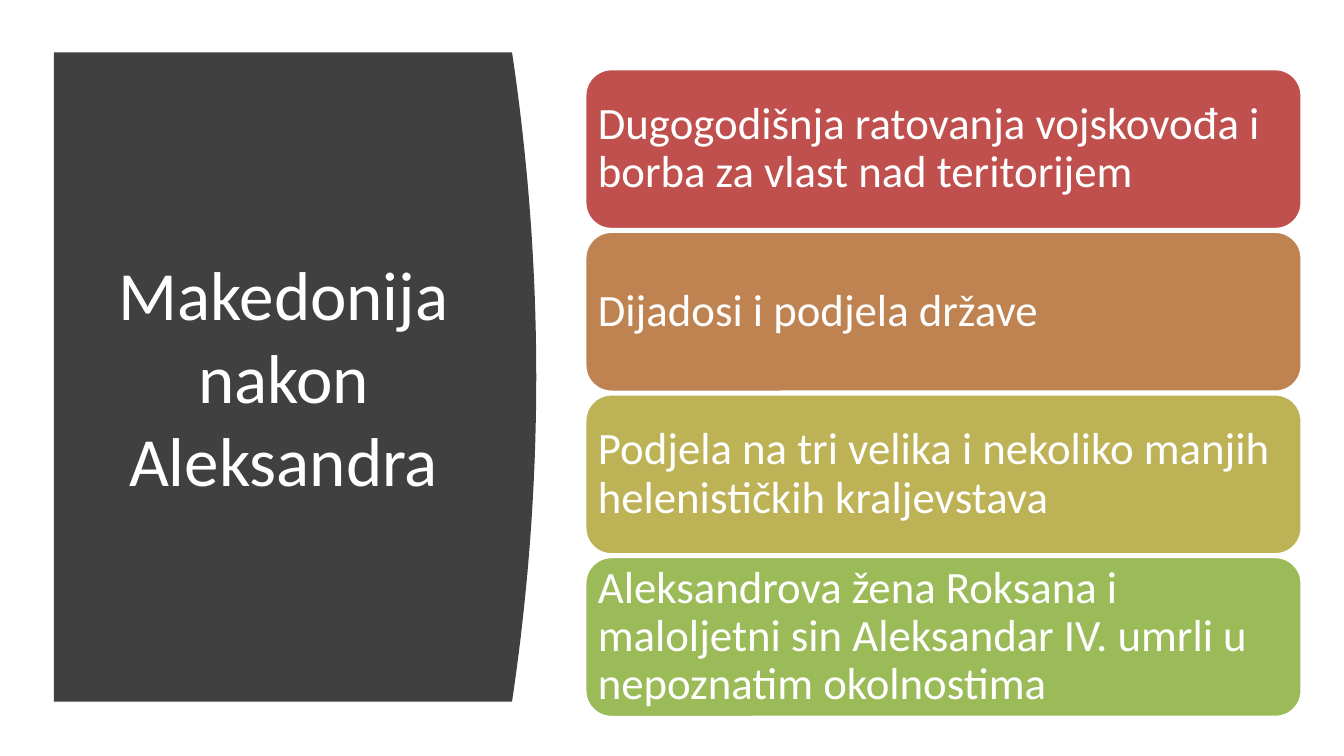
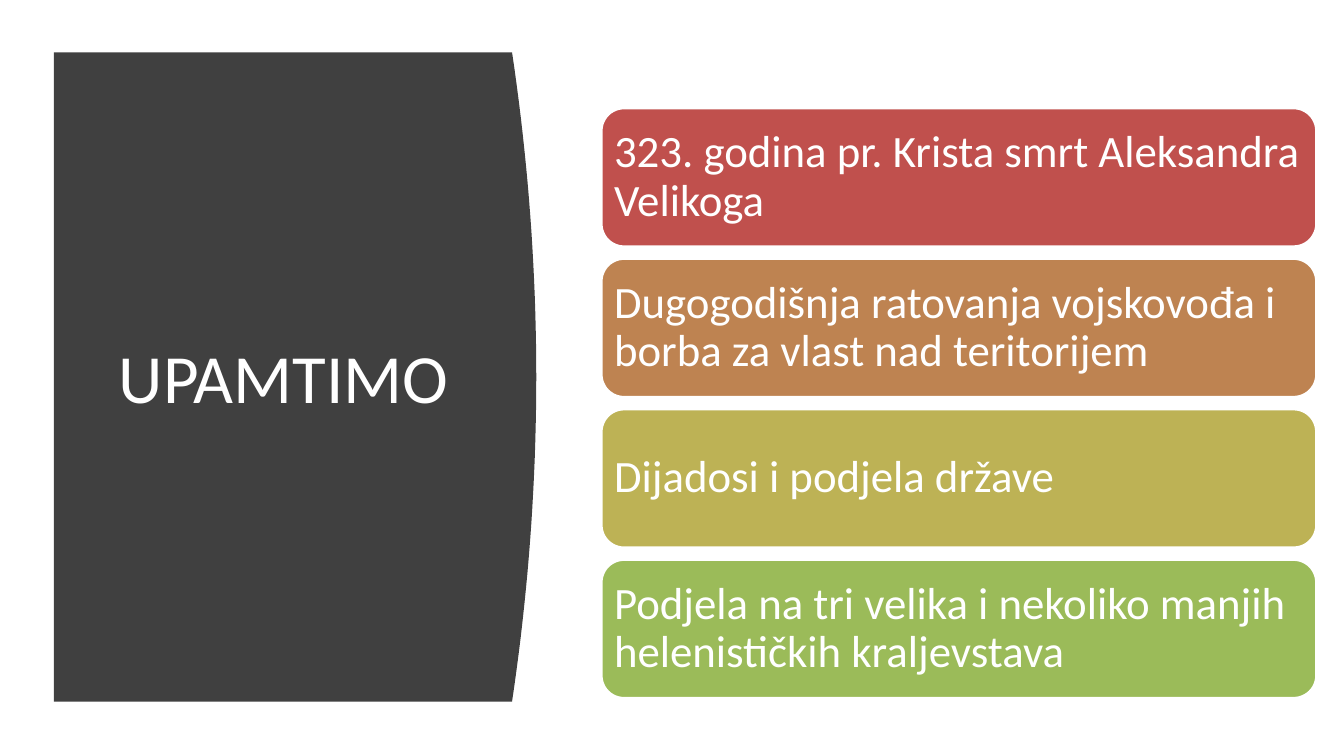
import dataclasses

import pptx
import pptx.dml.color
import pptx.enum.shapes
import pptx.enum.text
import pptx.presentation
import pptx.slide
import pptx.text.text
import pptx.util
from pptx.util import Inches

WHITE = pptx.dml.color.RGBColor(0xFF, 0xFF, 0xFF)
CHARCOAL = pptx.dml.color.RGBColor(0x40, 0x40, 0x40)
RED = pptx.dml.color.RGBColor(0xC0, 0x50, 0x4D)
COPPER = pptx.dml.color.RGBColor(0xBE, 0x83, 0x51)
OLIVE = pptx.dml.color.RGBColor(0xBD, 0xB2, 0x55)
GREEN = pptx.dml.color.RGBColor(0x9B, 0xBB, 0x59)
CARD_COLORS = (RED, COPPER, OLIVE, GREEN)

SLIDE_WIDTH = Inches(10)
SLIDE_HEIGHT = Inches(10 * 9 / 16)

FONT = "Calibri"
TITLE_SIZE = pptx.util.Pt(37)
CARD_SIZE = pptx.util.Pt(24)
TITLE_ONLY = 5

PANEL_LEFT, PANEL_TOP = 0.4, 0.39
PANEL_EDGE, PANEL_BOTTOM = 3.81, 5.22
PANEL_BULGE = 0.18
CURVE_STEPS = 40

CARD_INSET = 0.1
CORNER_RATIO = 0.17
CORNER_TEXT_RATIO = 0.29

WARS = "Dugogodišnja ratovanja vojskovođa i borba za vlast nad teritorijem"
DIADOCHI = "Dijadosi i podjela države"
KINGDOMS = "Podjela na tri velika i nekoliko manjih helenističkih kraljevstava"


@dataclasses.dataclass(frozen=True)
class CardStack:
    left: float
    top: float
    width: float
    height: float
    pitch: float


@dataclasses.dataclass(frozen=True)
class Topic:
    title: str
    stack: CardStack
    points: tuple[str, ...]


TOPICS = (
    Topic(
        "Makedonija nakon Aleksandra",
        CardStack(left=4.35, top=0.51, width=5.34, height=1.2, pitch=1.21),
        (
            WARS,
            DIADOCHI,
            KINGDOMS,
            "Aleksandrova žena Roksana i maloljetni sin Aleksandar IV. "
            "umrli u nepoznatim okolnostima",
        ),
    ),
    Topic(
        "UPAMTIMO",
        CardStack(left=4.47, top=0.8, width=5.33, height=1.04, pitch=1.12),
        ("323. godina pr. Krista smrt Aleksandra Velikoga", WARS, DIADOCHI, KINGDOMS),
    ),
)


def write(
    frame: pptx.text.text.TextFrame,
    text: str,
    size: pptx.util.Pt,
    alignment: pptx.enum.text.PP_ALIGN,
    line_spacing: float,
) -> None:
    frame.text = text
    frame.word_wrap = True
    frame.auto_size = pptx.enum.text.MSO_AUTO_SIZE.NONE
    frame.vertical_anchor = pptx.enum.text.MSO_ANCHOR.MIDDLE
    paragraph = frame.paragraphs[0]
    paragraph.alignment = alignment
    paragraph.line_spacing = line_spacing
    for run in paragraph.runs:
        run.font.name = FONT
        run.font.size = size
        run.font.color.rgb = WHITE


def draw_title(slide: pptx.slide.Slide, text: str) -> None:
    title = slide.shapes.title
    title.left, title.top = Inches(0.71), Inches(0.83)
    title.width, title.height = Inches(2.8), Inches(3.93)
    write(title.text_frame, text, TITLE_SIZE, pptx.enum.text.PP_ALIGN.CENTER, 1.0)


def draw_panel(slide: pptx.slide.Slide) -> None:
    curve = []
    for step in range(CURVE_STEPS + 1):
        share = step / CURVE_STEPS
        x = PANEL_EDGE + PANEL_BULGE * 4 * share * (1 - share)
        y = PANEL_TOP + (PANEL_BOTTOM - PANEL_TOP) * share
        curve.append((Inches(x), Inches(y)))
    builder = slide.shapes.build_freeform(Inches(PANEL_LEFT), Inches(PANEL_TOP))
    builder.add_line_segments(curve + [(Inches(PANEL_LEFT), Inches(PANEL_BOTTOM))])
    panel = builder.convert_to_shape()
    panel.shadow.inherit = False
    panel.fill.solid()
    panel.fill.fore_color.rgb = CHARCOAL
    panel.line.fill.background()
    slide.shapes.title.element.addprevious(panel.element)


def draw_cards(slide: pptx.slide.Slide, topic: Topic) -> None:
    stack = topic.stack
    margin = Inches(CARD_INSET - CORNER_TEXT_RATIO * CORNER_RATIO * stack.height)
    for row, (point, color) in enumerate(zip(topic.points, CARD_COLORS)):
        card = slide.shapes.add_shape(
            pptx.enum.shapes.MSO_SHAPE.ROUNDED_RECTANGLE,
            Inches(stack.left),
            Inches(stack.top + row * stack.pitch),
            Inches(stack.width),
            Inches(stack.height),
        )
        card.shadow.inherit = False
        card.fill.solid()
        card.fill.fore_color.rgb = color
        card.line.color.rgb = WHITE
        card.line.width = pptx.util.Pt(2)
        frame = card.text_frame
        frame.margin_left = frame.margin_right = margin
        frame.margin_top = frame.margin_bottom = margin
        write(frame, point, CARD_SIZE, pptx.enum.text.PP_ALIGN.LEFT, 0.9)


def add_topic(deck: pptx.presentation.Presentation, topic: Topic) -> None:
    slide = deck.slides.add_slide(deck.slide_layouts[TITLE_ONLY])
    draw_title(slide, topic.title)
    draw_panel(slide)
    draw_cards(slide, topic)


def main() -> None:
    deck = pptx.Presentation()
    deck.slide_width, deck.slide_height = SLIDE_WIDTH, SLIDE_HEIGHT
    for topic in TOPICS:
        add_topic(deck, topic)
    deck.save("out.pptx")


if __name__ == "__main__":
    main()
